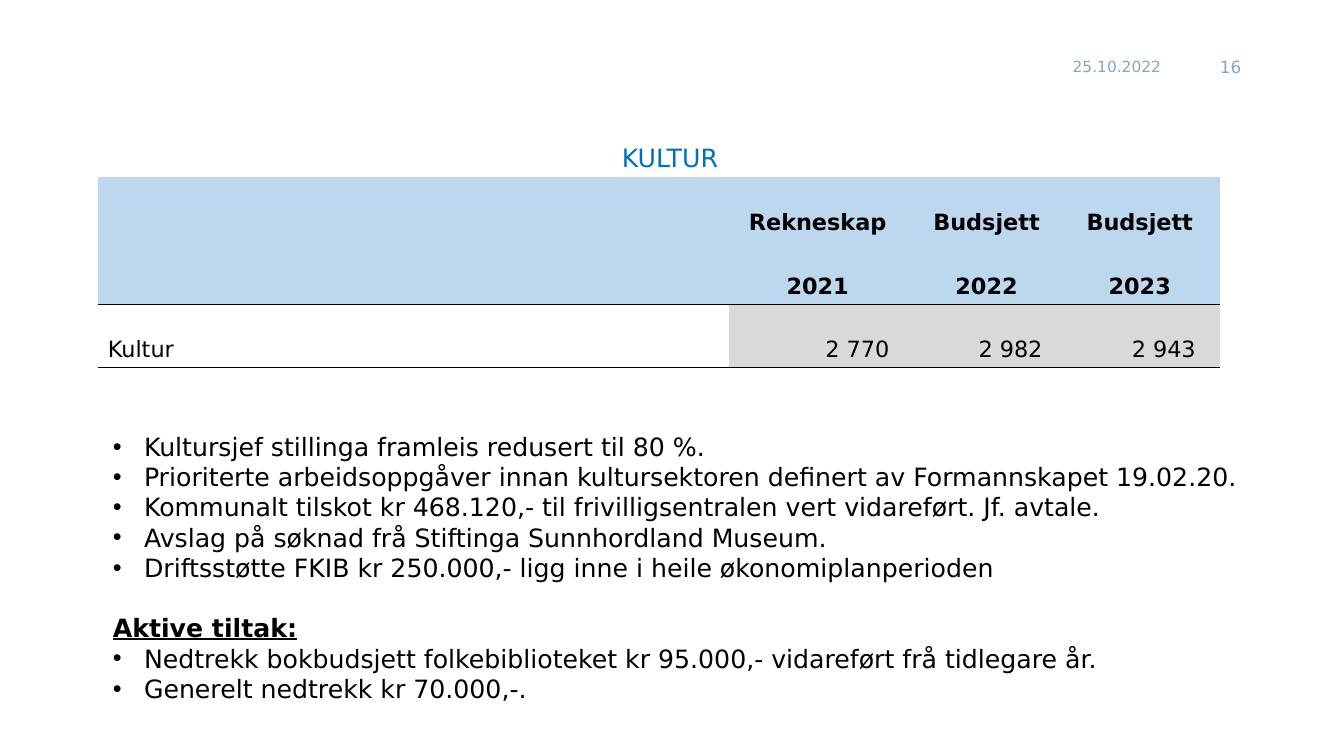
"""Build the culture budget slide."""
from lxml.etree import SubElement
from pptx import Presentation
from pptx.dml.color import RGBColor
from pptx.enum.text import MSO_ANCHOR, PP_ALIGN
from pptx.oxml import parse_xml
from pptx.oxml.ns import nsdecls, qn
from pptx.util import Pt

PX = 9144
FONT = "DejaVu Sans"
BLACK = RGBColor(0x00, 0x00, 0x00)
TITLE_BLUE = RGBColor(0x00, 0x70, 0xC0)
MUTED_BLUE = RGBColor(0x86, 0xA7, 0xC2)
HEADER_BLUE = RGBColor(0xBD, 0xD7, 0xEE)
VALUE_GREY = RGBColor(0xD9, 0xD9, 0xD9)
NO_GRID_STYLE = "{2D5ABB26-0587-4C30-8999-92F81FD0307C}"

COLUMN_WIDTHS = [626, 183, 152, 152]
ROW_HEIGHT = 63
BUDGET = [
    ["", "Rekneskap", "Budsjett", "Budsjett"],
    ["", "2021", "2022", "2023"],
    ["Kultur", "2 770", "2 982", "2 943"],
]
STATUS = [
    "Kultursjef stillinga framleis redusert til 80 %.",
    "Prioriterte arbeidsoppgåver innan kultursektoren definert av Formannskapet 19.02.20.",
    "Kommunalt tilskot kr 468.120,- til frivilligsentralen vert vidareført. Jf. avtale.",
    "Avslag på søknad frå Stiftinga Sunnhordland Museum.",
    "Driftsstøtte FKIB kr 250.000,- ligg inne i heile økonomiplanperioden",
]
MEASURES_HEADING = "Aktive tiltak:"
MEASURES = [
    "Nedtrekk bokbudsjett folkebiblioteket kr 95.000,- vidareført frå tidlegare år.",
    "Generelt nedtrekk kr 70.000,-.",
]


def style_span(para, text, size, color, **formats):
    """Write one formatted span into a paragraph."""
    span = para.add_run()
    span.text = text
    for name, value in {"name": FONT, "size": Pt(size), **formats}.items():
        setattr(span.font, name, value)
    span.font.color.rgb = color


def add_box(page, left, top, width, height, anchor=MSO_ANCHOR.TOP):
    """Add a wrapping text box and return its text frame."""
    box = page.shapes.add_textbox(*(n * PX for n in (left, top, width, height)))
    box.text_frame.word_wrap = True
    box.text_frame.vertical_anchor = anchor
    return box.text_frame


def add_label(page, bounds, text, size, color, align, anchor):
    """Add a text box holding a single line."""
    para = add_box(page, *bounds, anchor).paragraphs[0]
    para.alignment = align
    style_span(para, text, size, color)


def add_bullet(para, indent):
    """Give a paragraph a hanging bullet."""
    properties = para._p.get_or_add_pPr()
    properties.set("marL", str(indent * PX))
    properties.set("indent", str(-indent * PX))
    SubElement(properties, qn("a:buFont"), typeface="Arial")
    SubElement(properties, qn("a:buChar"), char="•")


def add_body(page):
    """Add the status bullets and the list of measures."""
    frame = add_box(page, 102, 423, 1139, 280)
    for index, text in enumerate([*STATUS, MEASURES_HEADING, *MEASURES]):
        para = frame.paragraphs[0] if index == 0 else frame.add_paragraph()
        heading = text == MEASURES_HEADING
        if heading:
            para.space_before = Pt(21.6)
        else:
            add_bullet(para, 31)
        para.line_spacing = Pt(21.6)
        style_span(para, text, 18, BLACK, bold=heading, underline=heading)


def add_bottom_border(cell):
    """Draw a thin line under a table cell."""
    border = parse_xml(
        f'<a:lnB {nsdecls("a")} w="9525"><a:solidFill>'
        f'<a:srgbClr val="{BLACK}"/></a:solidFill></a:lnB>'
    )
    cell._tc.get_or_add_tcPr().insert(0, border)


def fill_cell(cell, text, row, column):
    """Set the text, fill and border of a budget cell."""
    header = row < 2
    if header or column:
        cell.fill.solid()
        cell.fill.fore_color.rgb = HEADER_BLUE if header else VALUE_GREY
    else:
        cell.fill.background()
    cell.vertical_anchor = MSO_ANCHOR.BOTTOM
    if row:
        add_bottom_border(cell)
    if not text:
        return
    para = cell.text_frame.paragraphs[0]
    if column:
        para.alignment = PP_ALIGN.CENTER if header else PP_ALIGN.RIGHT
        cell.margin_right = (17 if header else 24) * PX
    style_span(para, text, 16, BLACK, bold=header)


def add_budget_table(page):
    """Add the budget table."""
    frame = page.shapes.add_table(
        len(BUDGET), len(COLUMN_WIDTHS), 97 * PX, 176 * PX,
        sum(COLUMN_WIDTHS) * PX, len(BUDGET) * ROW_HEIGHT * PX,
    )
    table = frame.table
    table.first_row = table.horz_banding = False
    table._tbl.tblPr.find(qn("a:tableStyleId")).text = NO_GRID_STYLE
    for column, width in zip(table.columns, COLUMN_WIDTHS):
        column.width = width * PX
    for row, texts in enumerate(BUDGET):
        table.rows[row].height = ROW_HEIGHT * PX
        for column, text in enumerate(texts):
            fill_cell(table.cell(row, column), text, row, column)


def main():
    """Build and save the deck."""
    deck = Presentation()
    deck.slide_width, deck.slide_height = 1333 * PX, 750 * PX
    page = deck.slides.add_slide(deck.slide_layouts[6])
    add_label(page, (1054, 46, 115, 40), "25.10.2022", 11, MUTED_BLUE,
              PP_ALIGN.LEFT, MSO_ANCHOR.MIDDLE)
    add_label(page, (1184, 46, 57, 40), "16", 12, MUTED_BLUE,
              PP_ALIGN.RIGHT, MSO_ANCHOR.MIDDLE)
    add_label(page, (110, 136, 1109, 40), "KULTUR", 18, TITLE_BLUE,
              PP_ALIGN.CENTER, MSO_ANCHOR.TOP)
    add_body(page)
    add_budget_table(page)
    deck.save("out.pptx")


if __name__ == "__main__":
    main()
